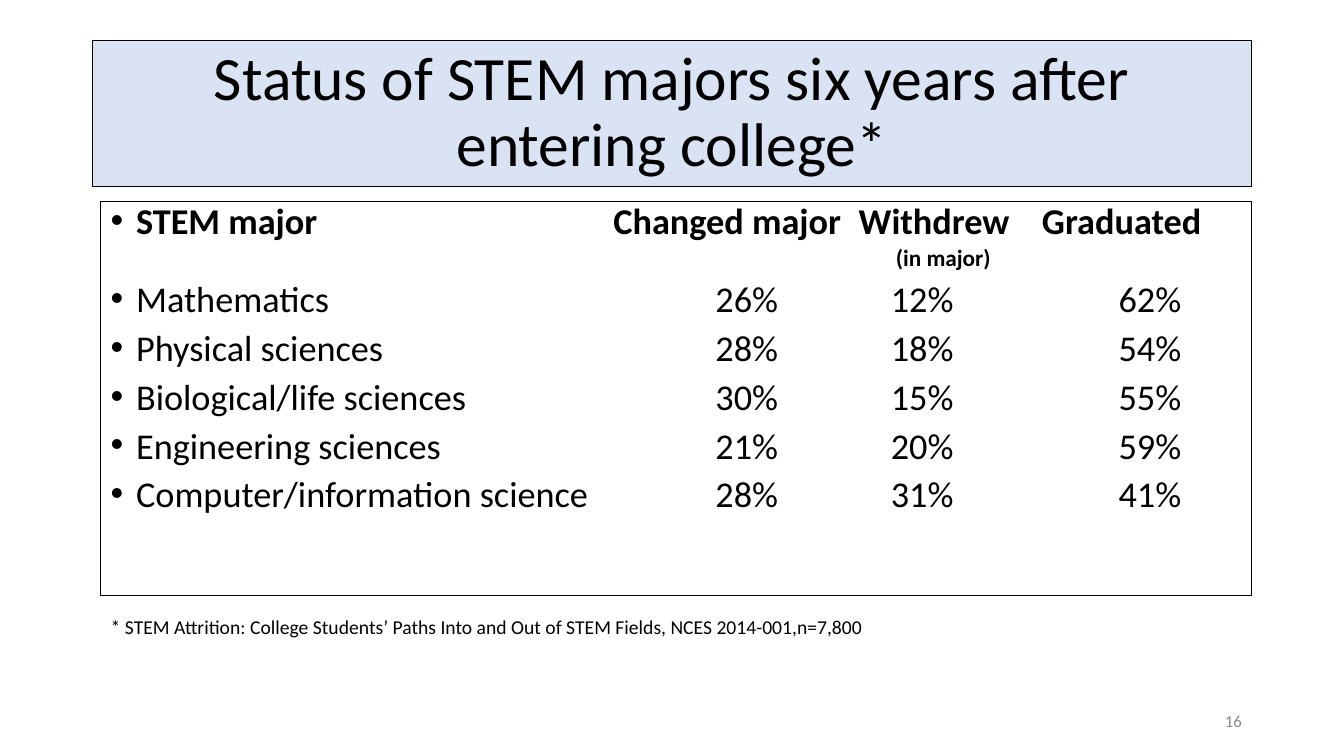
from lxml import etree
from pptx import Presentation
from pptx.dml.color import RGBColor
from pptx.enum.text import MSO_ANCHOR, MSO_AUTO_SIZE, PP_ALIGN
from pptx.oxml.ns import qn
from pptx.util import Cm, Pt

LEFT, CENTER, RIGHT = PP_ALIGN.LEFT, PP_ALIGN.CENTER, PP_ALIGN.RIGHT
TOP, MIDDLE = MSO_ANCHOR.TOP, MSO_ANCHOR.MIDDLE
NO_AUTOFIT = MSO_AUTO_SIZE.NONE
TITLE_ONLY = 5

BLACK = RGBColor(0x00, 0x00, 0x00)
GRAY = RGBColor(0x8C, 0x8C, 0x8C)
PALE_BLUE = RGBColor(0xDA, 0xE3, 0xF3)

# Tab stops in cm from the text edge
HEADING_TABS = (12.67, 18.85, 23.47)
NOTE_TABS = (19.79,)
VALUE_TABS = (15.24, 19.66, 25.4)

MAJORS = [
    ("Mathematics", "26%", "12%", "62%"),
    ("Physical sciences", "28%", "18%", "54%"),
    ("Biological/life sciences", "30%", "15%", "55%"),
    ("Engineering sciences", "21%", "20%", "59%"),
    ("Computer/information science", "28%", "31%", "41%"),
]


class SlideBuilder:
    font_name = "Calibri"
    indent = Cm(0.64)

    def __init__(self, slide):
        self.slide = slide

    def style(self, paragraph, size, color=BLACK, bold=False, align=LEFT):
        paragraph.alignment = align
        font = paragraph.font
        font.name, font.size, font.bold = self.font_name, Pt(size), bold
        font.color.rgb = color

    def outline(self, shape):
        shape.line.color.rgb = BLACK
        shape.line.width = Pt(0.75)

    def title(self, text, left, top, width, height):
        title = self.slide.shapes.title
        title.left, title.top = Cm(left), Cm(top)
        title.width, title.height = Cm(width), Cm(height)
        title.fill.solid()
        title.fill.fore_color.rgb = PALE_BLUE
        self.outline(title)
        frame = title.text_frame
        frame.text = text
        frame.auto_size = NO_AUTOFIT
        frame.vertical_anchor = MIDDLE
        paragraph = frame.paragraphs[0]
        paragraph.line_spacing = 0.9
        self.style(paragraph, 44, align=CENTER)

    def box(self, left, top, width, height, anchor=TOP):
        box = self.slide.shapes.add_textbox(Cm(left), Cm(top), Cm(width), Cm(height))
        box.text_frame.word_wrap = True
        box.text_frame.vertical_anchor = anchor
        return box

    def label(self, text, left, top, width, height, size, color=BLACK, align=LEFT, anchor=TOP):
        frame = self.box(left, top, width, height, anchor).text_frame
        frame.text = text
        self.style(frame.paragraphs[0], size, color, align=align)

    def row(self, frame, cells, tabs, size=25.9, bold=False, bullet=True, space=10):
        first = not frame.paragraphs[0].runs
        paragraph = frame.paragraphs[0] if first else frame.add_paragraph()
        paragraph.add_run().text = "\t".join(cells)
        paragraph.line_spacing = 0.8
        paragraph.space_before = Pt(0 if first else space)
        properties = paragraph._p.get_or_add_pPr()
        if bullet:
            properties.set("marL", str(self.indent))
            properties.set("indent", str(-self.indent))
            etree.SubElement(properties, qn("a:buFont"), typeface="Arial")
            etree.SubElement(properties, qn("a:buChar"), char="•")
        tab_list = etree.SubElement(properties, qn("a:tabLst"))
        for position in tabs:
            etree.SubElement(tab_list, qn("a:tab"), pos=str(Cm(position)), algn="l")
        self.style(paragraph, size, bold=bold)


def main():
    presentation = Presentation()
    presentation.slide_width, presentation.slide_height = Cm(33.87), Cm(19.05)
    layout = presentation.slide_layouts[TITLE_ONLY]
    builder = SlideBuilder(presentation.slides.add_slide(layout))

    # Title
    builder.title("Status of STEM majors six years after entering college*",
                  2.33, 1.02, 29.21, 3.68)

    # Tabbed list of majors
    majors_box = builder.box(2.54, 5.08, 29, 9.93)
    builder.outline(majors_box)
    frame = majors_box.text_frame
    builder.row(frame, ("STEM major", "Changed major", "Withdrew", "Graduated"),
                HEADING_TABS, bold=True)
    builder.row(frame, ("", "(in major)"), NOTE_TABS, size=16.6, bold=True,
                bullet=False, space=5)
    for major in MAJORS:
        builder.row(frame, major, VALUE_TABS)

    # Source note and slide number
    builder.label("* STEM Attrition: College Students’ Paths Into and Out of STEM Fields, "
                  "NCES 2014-001,n=7,800", 2.54, 15.37, 19.66, 1.45, 14)
    builder.label("16", 23.93, 17.65, 7.62, 1.02, 12, GRAY, RIGHT, MIDDLE)

    presentation.save("out.pptx")


if __name__ == "__main__":
    main()
